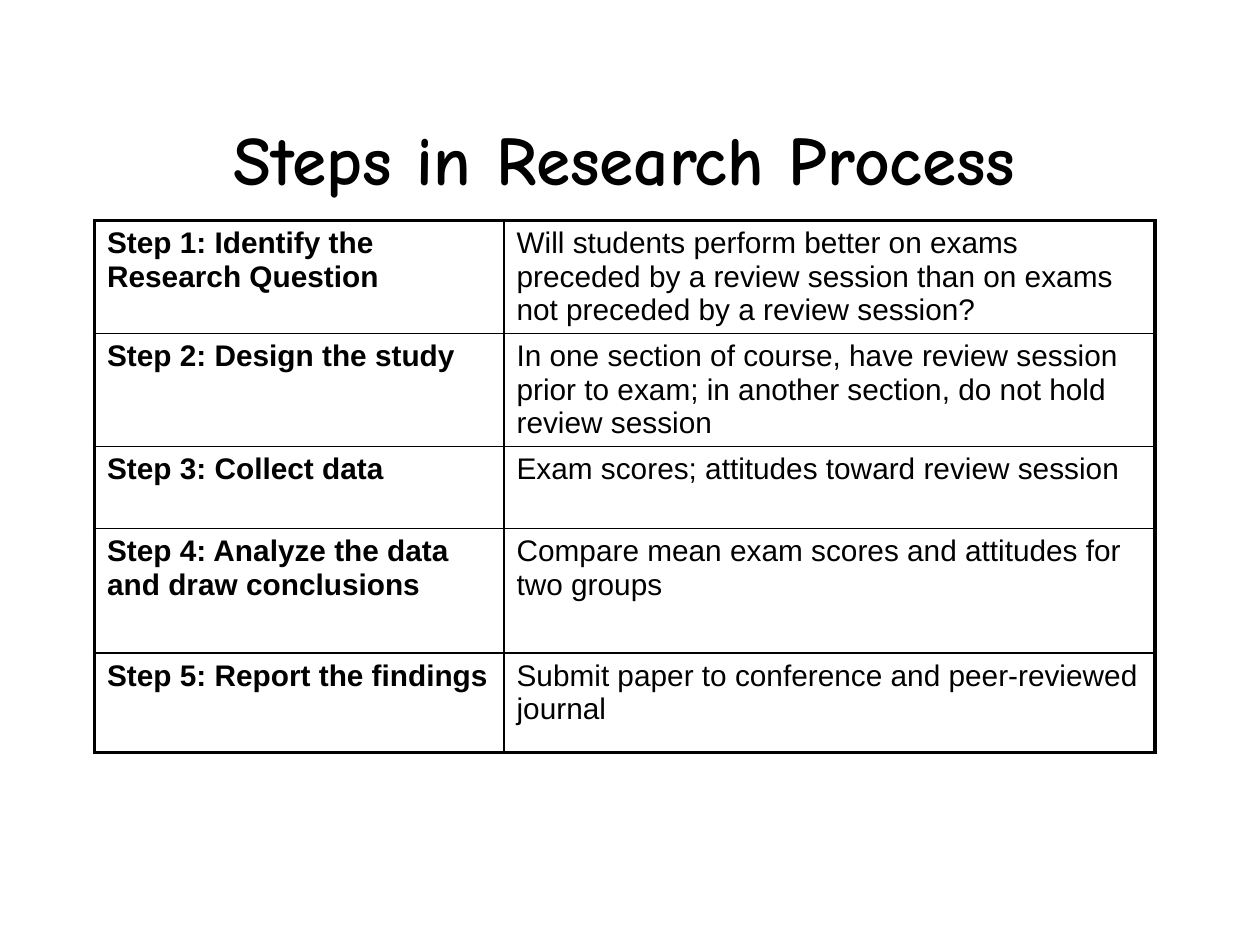
from pptx import Presentation
from pptx.dml.color import RGBColor
from pptx.enum import text
from pptx.oxml import ns
from pptx.util import Pt
from lxml import etree

BLACK = RGBColor(0, 0, 0)
OUTER_WIDTH, INNER_WIDTH = Pt(2.25), Pt(1)
COLUMN_WIDTHS = [234, 372]
ROW_HEIGHTS = [64.6, 64.6, 46.8, 71.3, 56.9]
STEPS = [
    ("Step 1: Identify the Research Question",
     "Will students perform better on exams preceded by a review session "
     "than on exams not preceded by a review session?"),
    ("Step 2: Design the study",
     "In one section of course, have review session prior to exam; "
     "in another section, do not hold review session"),
    ("Step 3: Collect data",
     "Exam scores; attitudes toward review session"),
    ("Step 4: Analyze the data and draw conclusions",
     "Compare mean exam scores and attitudes for two groups"),
    ("Step 5: Report the findings",
     "Submit paper to conference and peer-reviewed journal"),
]


def add_run(paragraph, words, font_name, size, bold):
    run = paragraph.add_run()
    run.text = words
    run.font.name = font_name
    run.font.size = Pt(size)
    run.font.bold = bold
    run.font.color.rgb = BLACK


def set_border(cell, side, width):
    properties = cell._tc.get_or_add_tcPr()
    line = etree.SubElement(properties, ns.qn(f"a:ln{side}"), w=str(width))
    fill = etree.SubElement(line, ns.qn("a:solidFill"))
    etree.SubElement(fill, ns.qn("a:srgbClr"), val=str(BLACK))


def place_title(slide, left, top, width, height):
    title = slide.shapes.title
    title.left, title.top = Pt(left), Pt(top)
    title.width, title.height = Pt(width), Pt(height)
    frame = title.text_frame
    frame.word_wrap = True
    frame.auto_size = text.MSO_AUTO_SIZE.NONE
    frame.vertical_anchor = text.MSO_ANCHOR.BOTTOM
    frame.margin_bottom = 0
    paragraph = frame.paragraphs[0]
    paragraph.alignment = text.PP_ALIGN.CENTER
    add_run(paragraph, "Steps in Research Process", "Comic Neue", 39.6, True)


def place_steps(slide, left, top, width, height):
    shape = slide.shapes.add_table(len(STEPS), len(COLUMN_WIDTHS),
                                   Pt(left), Pt(top), Pt(width), Pt(height))
    table = shape.table
    table.first_row = table.horz_banding = False
    for column, column_width in zip(table.columns, COLUMN_WIDTHS):
        column.width = Pt(column_width)
    last_row, last_column = len(STEPS) - 1, len(COLUMN_WIDTHS) - 1
    for row, step in enumerate(STEPS):
        table.rows[row].height = Pt(ROW_HEIGHTS[row])
        for column, words in enumerate(step):
            cell = table.cell(row, column)
            add_run(cell.text_frame.paragraphs[0], words, "Arial", 17, column == 0)
            on_edge = {"L": column == 0, "R": column == last_column,
                       "T": row == 0, "B": row == last_row}
            for side, outer in on_edge.items():
                set_border(cell, side, OUTER_WIDTH if outer else INNER_WIDTH)
            cell.fill.background()


def main():
    presentation = Presentation()
    presentation.slide_width, presentation.slide_height = Pt(720), Pt(540)
    slide = presentation.slides.add_slide(presentation.slide_layouts[5])
    place_title(slide, 54, 24, 606, 90)
    place_steps(slide, 54, 126, sum(COLUMN_WIDTHS), sum(ROW_HEIGHTS))
    presentation.save("out.pptx")


if __name__ == "__main__":
    main()
